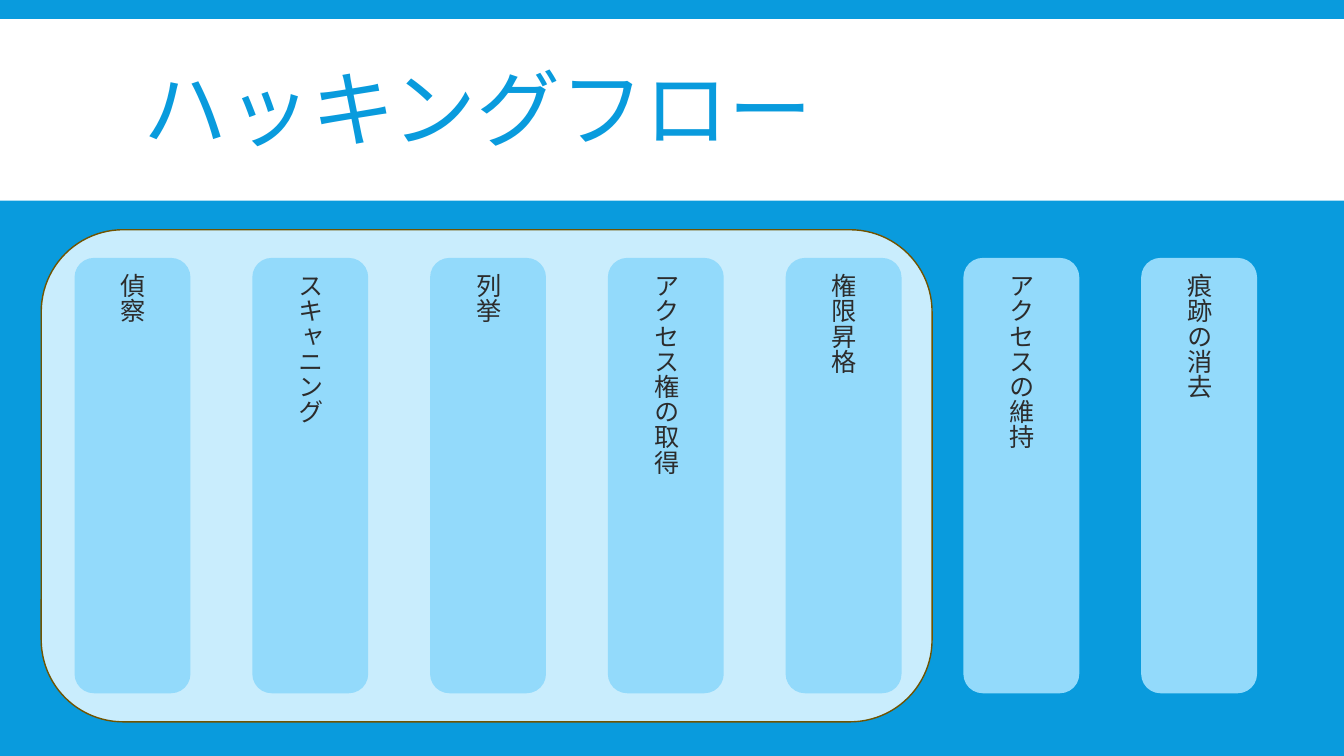
from lxml import etree
from pptx import Presentation
from pptx.dml.color import RGBColor
from pptx.enum.shapes import MSO_SHAPE
from pptx.enum.text import MSO_ANCHOR, PP_ALIGN
from pptx.oxml.ns import qn
from pptx.util import Cm, Pt

RECTANGLE = MSO_SHAPE.RECTANGLE
ROUNDED = MSO_SHAPE.ROUNDED_RECTANGLE
MIDDLE = MSO_ANCHOR.MIDDLE
LEFT, CENTER = PP_ALIGN.LEFT, PP_ALIGN.CENTER

BLUE = RGBColor(0x09, 0x9B, 0xDD)
WHITE = RGBColor(0xFF, 0xFF, 0xFF)
PALE_BLUE = RGBColor(0xC9, 0xED, 0xFD)
LIGHT_BLUE = RGBColor(0x93, 0xDA, 0xFB)
BROWN = RGBColor(0x70, 0x54, 0x00)
DARK = RGBColor(0x2C, 0x2C, 0x2C)

JAPANESE_FONT = "Noto Sans CJK JP"
LATIN_FONT = "Calibri"

STEPS = ["偵察", "スキャニング", "列挙", "アクセス権の取得",
         "権限昇格", "アクセスの維持", "痕跡の消去"]
FIRST_LEFT, STEP_PITCH = 1.88, 4.48


class FlowPage:
    """Holds the slide and the style shared by its elements."""

    def __init__(self, deck):
        self.page = deck.slides.add_slide(deck.slide_layouts[5])
        self.page.background.fill.solid()
        self.page.background.fill.fore_color.rgb = BLUE

    def add_span(self, para, text, size, color, font):
        span = para.add_run()
        span.text = text
        span.font.size = Pt(size)
        span.font.color.rgb = color
        span.font.name = font
        east_asian = etree.SubElement(span._r.get_or_add_rPr(), qn("a:ea"))
        east_asian.set("typeface", JAPANESE_FONT)

    def panel(self, kind, left, top, width, height, fill, line=None):
        box = self.page.shapes.add_shape(
            kind, Cm(left), Cm(top), Cm(width), Cm(height))
        box.shadow.inherit = False
        box.fill.solid()
        box.fill.fore_color.rgb = fill
        if line is None:
            box.line.fill.background()
        else:
            box.line.color.rgb = line
            box.line.width = Pt(1)
        return box

    def title(self, text):
        box = self.page.shapes.title
        self.page.shapes._spTree.append(box._element)  # in front of the panels
        box.left, box.top = Cm(3.35), Cm(0.79)
        box.width, box.height = Cm(27.18), Cm(4.19)
        box.text_frame.vertical_anchor = MIDDLE
        para = box.text_frame.paragraphs[0]
        para.alignment = LEFT
        para.line_spacing = 0.85
        self.add_span(para, text, 60, BLUE, JAPANESE_FONT)

    def step(self, left, text):
        """Add one column of the flow with vertical text."""
        box = self.panel(ROUNDED, left, 6.5, 2.92, 10.97, LIGHT_BLUE)
        box.text_frame.vertical_anchor = MIDDLE
        box.text_frame._txBody.bodyPr.set("vert", "eaVert")
        para = box.text_frame.paragraphs[0]
        para.alignment = CENTER
        self.add_span(para, text, 18, DARK, LATIN_FONT)


def main():
    deck = Presentation()
    deck.slide_width, deck.slide_height = Cm(33.87), Cm(19.05)
    flow = FlowPage(deck)
    flow.panel(RECTANGLE, 0, 0.48, 33.87, 4.58, WHITE)
    flow.panel(ROUNDED, 1.04, 5.79, 22.45, 12.4, PALE_BLUE, BROWN)
    flow.title("ハッキングフロー")
    for index, text in enumerate(STEPS):
        flow.step(FIRST_LEFT + index * STEP_PITCH, text)
    deck.save("out.pptx")


if __name__ == "__main__":
    main()
